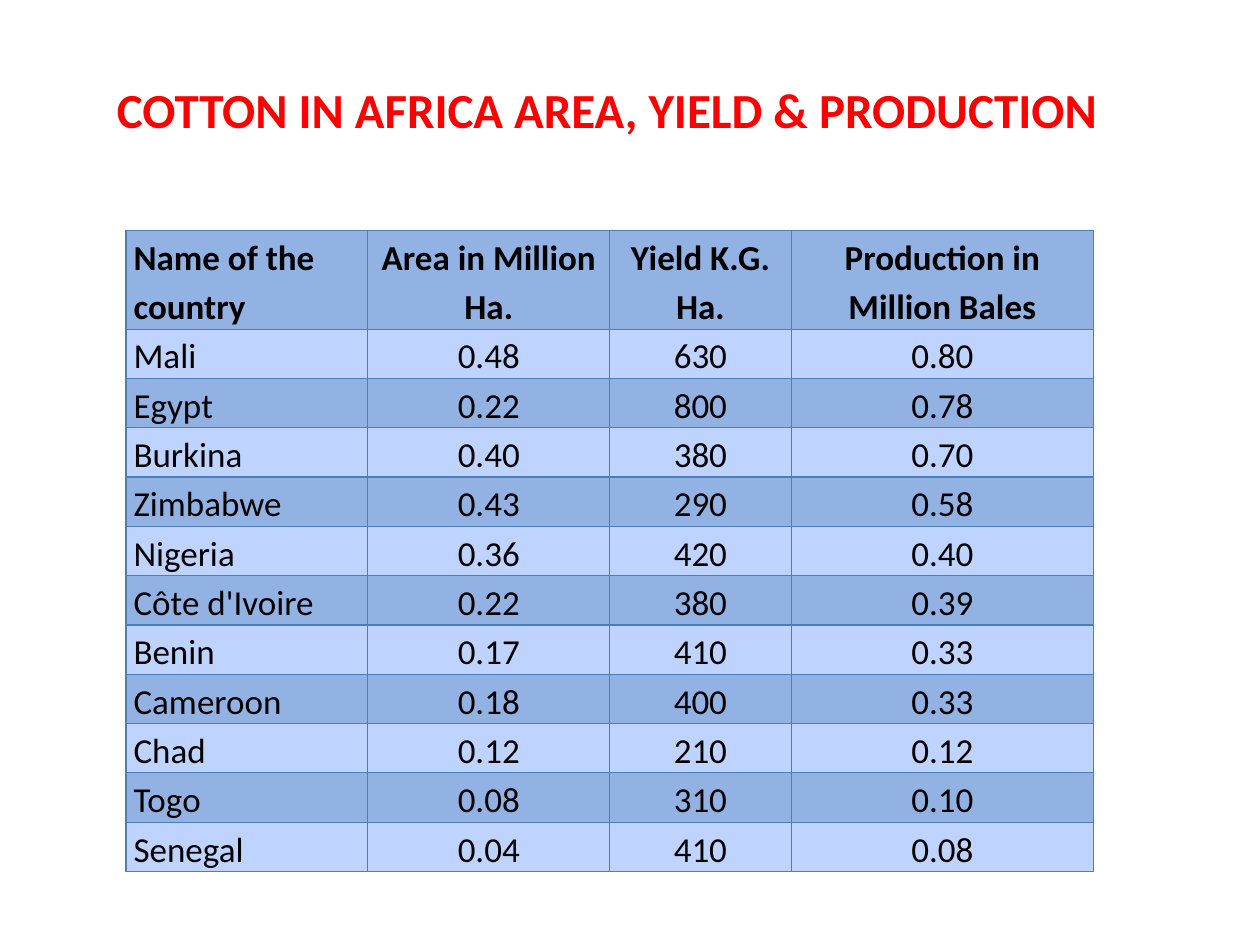
from lxml import etree
from pptx import Presentation
from pptx.dml.color import RGBColor
from pptx.enum.text import MSO_ANCHOR, PP_ALIGN
from pptx.oxml.ns import qn
from pptx.util import Inches, Pt

LEFT, CENTER = PP_ALIGN.LEFT, PP_ALIGN.CENTER
TOP = MSO_ANCHOR.TOP

THEME = {
    "font": "Calibri",
    "title": RGBColor(0xFF, 0x00, 0x00),
    "text": RGBColor(0x00, 0x00, 0x00),
    "bands": (RGBColor(0x93, 0xB2, 0xE4), RGBColor(0xBF, 0xD3, 0xFF)),
    "border": "4B7EBC",
    "border_width": Pt(0.75),
    "title_size": Pt(28),
    "table_size": Pt(20),
}

# Table grid: column and row spans in equal units
COLUMN_UNIT, ROW_UNIT = Inches(0.48), Inches(0.39)
COLUMN_SPANS = (4, 4, 3, 5)
HEADER_SPAN = 2

ROWS = [
    ("Name of the country", "Area in Million Ha.", "Yield K.G. Ha.",
     "Production in Million Bales"),
    ("Mali", "0.48", "630", "0.80"),
    ("Egypt", "0.22", "800", "0.78"),
    ("Burkina", "0.40", "380", "0.70"),
    ("Zimbabwe", "0.43", "290", "0.58"),
    ("Nigeria", "0.36", "420", "0.40"),
    ("Côte d'Ivoire", "0.22", "380", "0.39"),
    ("Benin", "0.17", "410", "0.33"),
    ("Cameroon", "0.18", "400", "0.33"),
    ("Chad", "0.12", "210", "0.12"),
    ("Togo", "0.08", "310", "0.10"),
    ("Senegal", "0.04", "410", "0.08"),
]


def write(paragraph, text, size, color, bold):
    run = paragraph.add_run()
    run.text = text
    for name, value in {"name": THEME["font"], "size": size, "bold": bold}.items():
        setattr(run.font, name, value)
    run.font.color.rgb = color


def add_borders(cell):
    properties = cell._tc.get_or_add_tcPr()
    for index, side in enumerate(("a:lnL", "a:lnR", "a:lnT", "a:lnB")):
        line = etree.Element(qn(side), w=str(THEME["border_width"]))
        fill = etree.SubElement(line, qn("a:solidFill"))
        etree.SubElement(fill, qn("a:srgbClr"), val=THEME["border"])
        properties.insert(index, line)


presentation = Presentation()
presentation.slide_width = Inches(10)
presentation.slide_height = Inches(7.5)
slide = presentation.slides.add_slide(presentation.slide_layouts[6])

# Table
row_spans = [HEADER_SPAN] + [1] * (len(ROWS) - 1)
table = slide.shapes.add_table(
    len(ROWS), len(COLUMN_SPANS), Inches(1), Inches(1.83),
    COLUMN_UNIT * sum(COLUMN_SPANS), ROW_UNIT * sum(row_spans)).table
for column, span in zip(table.columns, COLUMN_SPANS):
    column.width = COLUMN_UNIT * span
for row, span in zip(table.rows, row_spans):
    row.height = ROW_UNIT * span

cell_format = {"margin_left": Inches(0.06), "margin_right": Inches(0.06),
               "margin_top": 0, "margin_bottom": 0, "vertical_anchor": TOP}
for row_index, values in enumerate(ROWS):
    for column_index, value in enumerate(values):
        cell = table.cell(row_index, column_index)
        for name, setting in cell_format.items():
            setattr(cell, name, setting)
        cell.fill.solid()
        cell.fill.fore_color.rgb = THEME["bands"][row_index % 2]
        add_borders(cell)
        paragraph = cell.text_frame.paragraphs[0]
        paragraph.alignment = CENTER if column_index else LEFT
        paragraph.line_spacing = 1.15
        write(paragraph, value, THEME["table_size"], THEME["text"], row_index == 0)

# Title
title = slide.shapes.add_textbox(Inches(0.83), Inches(0.58), Inches(8.08), Inches(1.04))
title.text_frame.word_wrap = True
write(title.text_frame.paragraphs[0], "COTTON IN AFRICA AREA, YIELD & PRODUCTION",
      THEME["title_size"], THEME["title"], True)

presentation.save("out.pptx")
